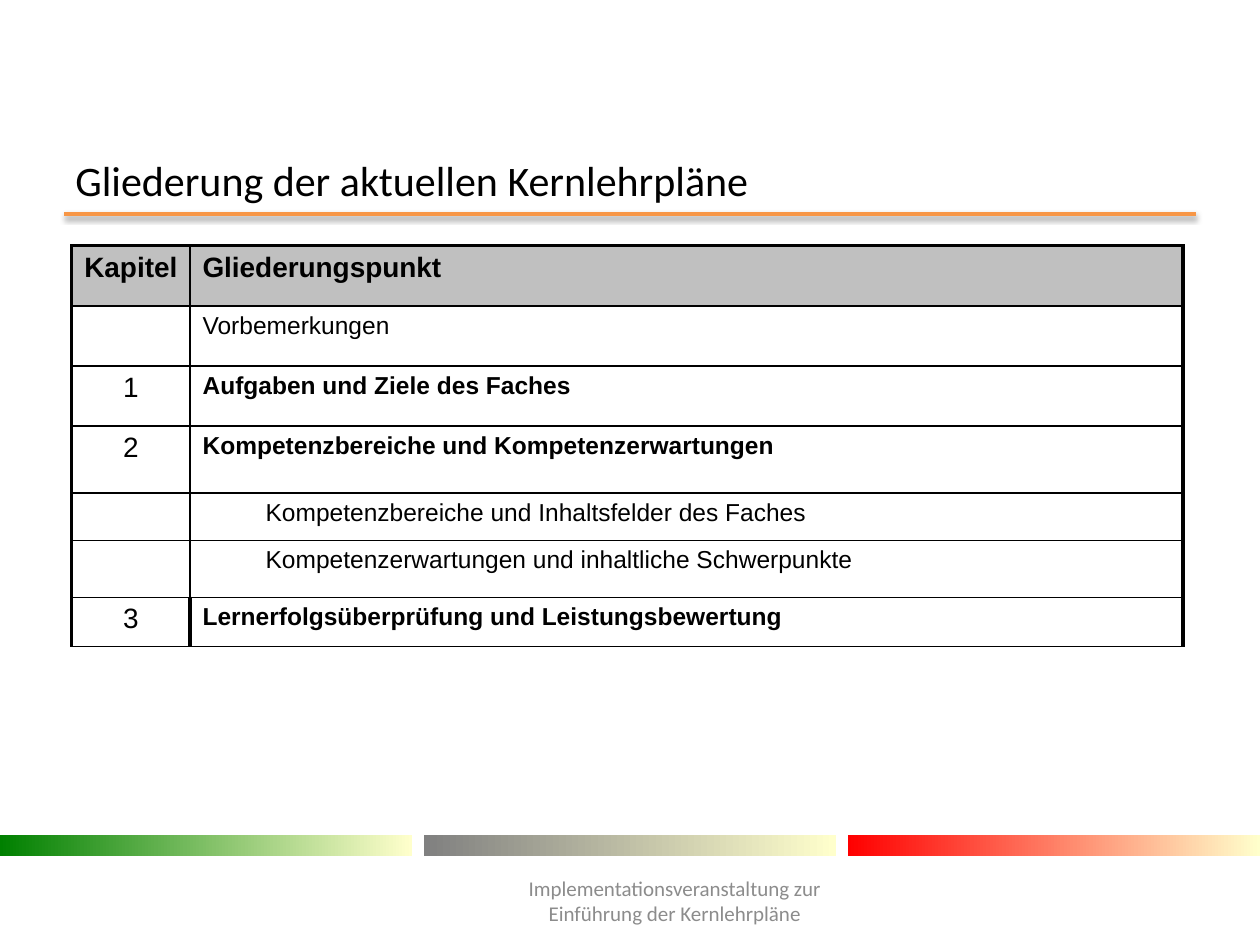
from dataclasses import dataclass

from lxml import etree
from pptx import Presentation
from pptx.dml.color import RGBColor
from pptx.enum import shapes, text
from pptx.oxml.ns import qn
from pptx.util import Pt


@dataclass(frozen=True)
class Theme:
    black: str = "000000"
    head: str = "C0C0C0"
    rule: str = "F79646"
    muted: str = "8C8C8C"
    pale: str = "FFFFCC"
    bands: tuple = ("008000", "808080", "FF0000")
    sans: str = "Calibri"
    grid: str = "Arial"
    title: int = 24
    large: int = 16
    body: int = 14
    small: int = 12
    thin: float = 1
    thick: float = 2.25


THEME = Theme()
ROWS = [
    ("Kapitel", "Gliederungspunkt", "head", 34.4),
    ("", "Vorbemerkungen", "plain", 34.4),
    ("1", "Aufgaben und Ziele des Faches", "main", 34.4),
    ("2", "Kompetenzbereiche und Kompetenzerwartungen", "main", 38.3),
    ("", "Kompetenzbereiche und Inhaltsfelder des Faches", "sub", 26.9),
    ("", "Kompetenzerwartungen und inhaltliche Schwerpunkte", "sub", 32.6),
    ("3", "Lernerfolgsüberprüfung und Leistungsbewertung", "main", 28.2),
]


def node(parent, tag, **attrs):
    return etree.SubElement(parent, qn(tag), {k: str(v) for k, v in attrs.items()})


def add_run(para, words, size, font, color, bold=False):
    run = para.add_run()
    run.text = words
    run.font.size = Pt(size)
    run.font.name = font
    run.font.bold = bold
    run.font.color.rgb = RGBColor.from_string(color)


def add_label(slide, box, words, size, color, align):
    label = slide.shapes.add_textbox(*map(Pt, box))
    frame = label.text_frame
    frame.word_wrap = True
    frame.vertical_anchor = text.MSO_ANCHOR.MIDDLE
    para = frame.paragraphs[0]
    para.alignment = align
    add_run(para, words, size, THEME.sans, color)


def add_title(slide, box):
    left, top, width, height = box
    add_label(slide, box, "Gliederung der aktuellen Kernlehrpläne",
              THEME.title, THEME.black, text.PP_ALIGN.LEFT)
    level = Pt(top + 33.8)
    rule = slide.shapes.add_connector(
        shapes.MSO_CONNECTOR.STRAIGHT,
        Pt(left + 0.7), level, Pt(left + width - 0.7), level)
    rule.line.color.rgb = RGBColor.from_string(THEME.rule)
    rule.line.width = Pt(2)
    effects = node(rule._element.spPr, "a:effectLst")
    shadow = node(effects, "a:outerShdw", blurRad=Pt(3.1), dist=Pt(1.6),
                  dir=90 * 60000, rotWithShape=0)
    tint = node(shadow, "a:srgbClr", val=THEME.black)
    node(tint, "a:alpha", val=38000)


def set_edges(cell, widths):
    props = cell._tc.get_or_add_tcPr()
    for side, width in zip("LRTB", widths):
        line = node(props, f"a:ln{side}", w=Pt(width))
        fill = node(line, "a:solidFill")
        node(fill, "a:srgbClr", val=THEME.black)


def fill_cell(cell, words, kind, first):
    para = cell.text_frame.paragraphs[0]
    size = THEME.large if first or kind == "head" else THEME.body
    if first and kind != "head":
        para.alignment = text.PP_ALIGN.CENTER
    if kind == "sub" and not first:
        para.level = 1
        props = para._p.get_or_add_pPr()
        props.set("marL", str(Pt(36)))
        props.set("indent", "0")
    if words:
        bold = kind == "head" or (kind == "main" and not first)
        add_run(para, words, size, THEME.grid, THEME.black, bold)
    else:
        node(para._p, "a:endParaRPr", sz=THEME.body * 100)
    if kind == "head":
        cell.fill.solid()
        cell.fill.fore_color.rgb = RGBColor.from_string(THEME.head)
    else:
        cell.fill.background()


def add_grid(slide, box):
    width = box[2]
    table = slide.shapes.add_table(len(ROWS), 2, *map(Pt, box)).table
    table.first_row = table.horz_banding = False
    split = 67.6
    for col, span in zip(table.columns, (split, width - split)):
        col.width = Pt(span)
    thin, thick = THEME.thin, THEME.thick
    for i, (mark, topic, kind, height) in enumerate(ROWS):
        table.rows[i].height = Pt(height)
        top = thick if i == 0 else thin
        inner = thick if i == len(ROWS) - 1 else thin
        for j, words in enumerate((mark, topic)):
            cell = table.cell(i, j)
            cell.margin_right = Pt(5)
            cell.margin_left = Pt(7.2 if j or kind == "head" else 5)
            sides = (inner, thick) if j else (thick, inner)
            set_edges(cell, (*sides, top, thin))
            fill_cell(cell, words, kind, j == 0)


def add_bands(slide, box):
    left, top, width, height = box
    span = 235.4
    step = (width - span) / (len(THEME.bands) - 1)
    for i, color in enumerate(THEME.bands):
        band = slide.shapes.add_shape(
            shapes.MSO_SHAPE.RECTANGLE,
            Pt(left + i * step), Pt(top), Pt(span), Pt(height))
        band.shadow.inherit = False
        band.line.fill.background()
        band.fill.gradient()
        band.fill.gradient_angle = 0
        for stop, tone in zip(band.fill.gradient_stops, (color, THEME.pale)):
            stop.color.rgb = RGBColor.from_string(tone)


def add_footer(slide, box):
    add_label(slide, box,
              "Implementationsveranstaltung zur Einführung der Kernlehrpläne",
              THEME.small, THEME.muted, text.PP_ALIGN.CENTER)


def main():
    deck = Presentation()
    deck.slide_width, deck.slide_height = Pt(720), Pt(540)
    slide = deck.slides.add_slide(deck.slide_layouts[6])
    add_bands(slide, (0, 477.4, 720, 11.5))
    add_title(slide, (36, 88.6, 648, 28))
    add_footer(slide, (269.3, 500.4, 232.6, 28.8))
    add_grid(slide, (41, 140.4, 635, 229.2))
    deck.save("out.pptx")


if __name__ == "__main__":
    main()
